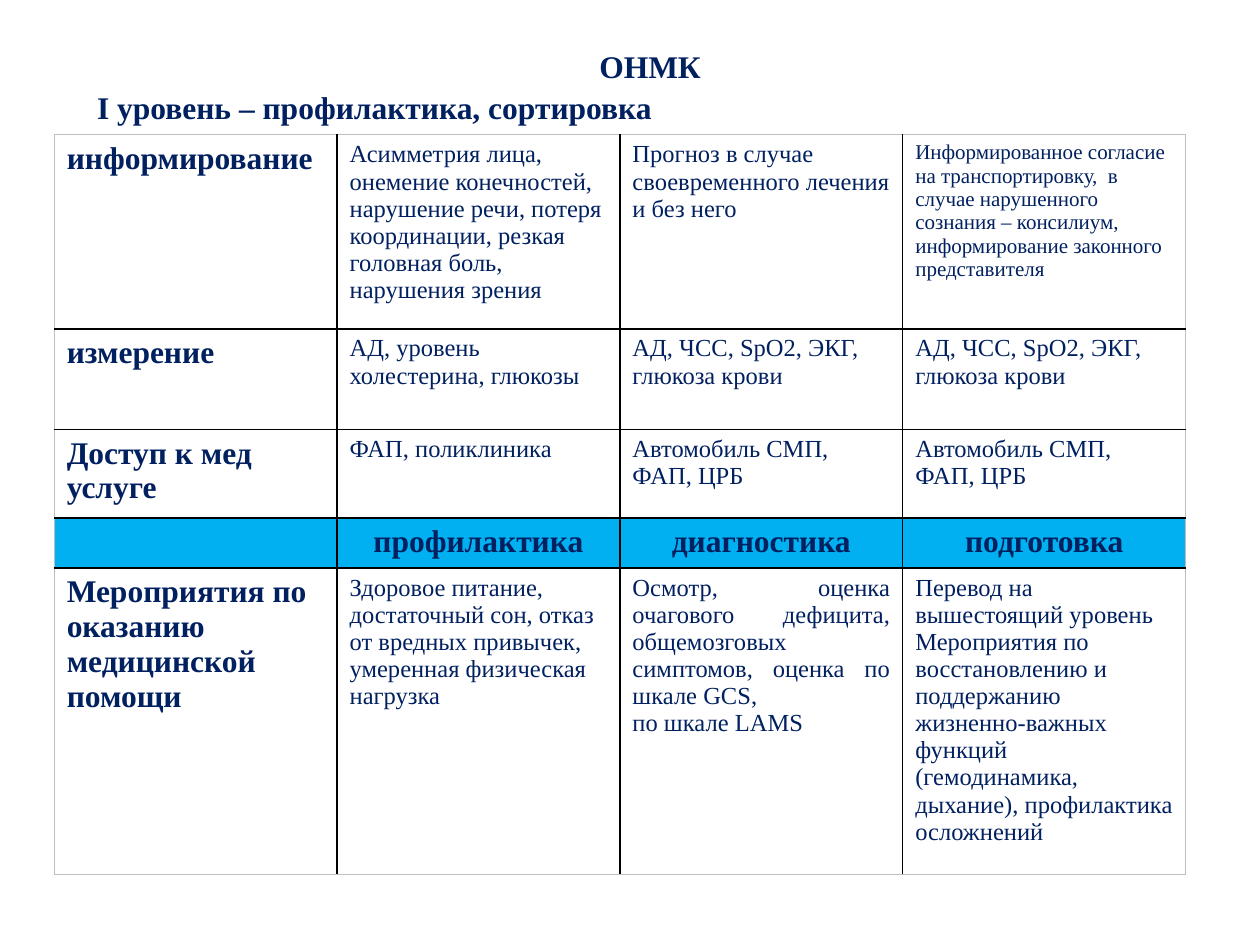
from lxml import etree
from pptx import Presentation
from pptx import util as u
from pptx.dml.color import RGBColor
from pptx.enum import text
from pptx.oxml import ns

COLORS = {"navy": "002060", "band": "00B0F0", "grid": "000000", "edge": "BFBFBF"}
FONT = "Times New Roman"
ALIGN = text.PP_ALIGN


def format_para(para, size, bold, align=ALIGN.LEFT):
    para.alignment = align
    para.font.name = FONT
    para.font.size = u.Pt(size)
    para.font.bold = bold
    para.font.color.rgb = RGBColor.from_string(COLORS["navy"])


def add_border(cell, side, color, width):
    line = etree.SubElement(cell._tc.get_or_add_tcPr(), ns.qn(f"a:{side}"), w=str(u.Pt(width)))
    fill = etree.SubElement(line, ns.qn("a:solidFill"))
    etree.SubElement(fill, ns.qn("a:srgbClr"), val=color)


deck = Presentation()
deck.slide_width, deck.slide_height = u.Inches(10), u.Inches(7.5)
page = deck.slides.add_slide(deck.slide_layouts[5])

# Title: centred heading with the level below it
title = page.shapes.title
title.left, title.top = u.Inches(0.67), u.Inches(0.29)
title.width, title.height = u.Inches(8.98), u.Inches(0.71)
frame = title.text_frame
frame.text = "ОНМК\nI уровень – профилактика, сортировка"
frame.word_wrap = True
frame.auto_size = text.MSO_AUTO_SIZE.NONE
frame.vertical_anchor = text.MSO_ANCHOR.TOP
for para, align in zip(frame.paragraphs, (ALIGN.CENTER, ALIGN.LEFT)):
    format_para(para, 18, True, align)
    para.line_spacing = 1.1

# Table content, a row height with its four cells
ROWS = [
    (1.54, ["информирование",
            "Асимметрия лица, онемение конечностей, нарушение речи, потеря координации, "
            "резкая головная боль, нарушения зрения",
            "Прогноз в случае своевременного лечения и без него",
            "Информированное согласие на транспортировку,  в случае нарушенного сознания – "
            "консилиум, информирование законного представителя"]),
    (0.8, ["измерение", "АД, уровень холестерина, глюкозы",
           "АД, ЧСС, SpO2, ЭКГ, глюкоза крови", "АД, ЧСС, SpO2, ЭКГ, глюкоза крови"]),
    (0.7, ["Доступ к мед услуге", "ФАП, поликлиника",
           "Автомобиль СМП, ФАП, ЦРБ", "Автомобиль СМП, ФАП, ЦРБ"]),
    (0.4, ["", "профилактика", "диагностика", "подготовка"]),
    (2.43, ["Мероприятия по оказанию медицинской помощи",
            "Здоровое питание, достаточный сон, отказ от вредных привычек, "
            "умеренная физическая нагрузка",
            "Осмотр, оценка очагового дефицита, общемозговых симптомов, "
            "оценка по шкале GCS,\nпо шкале LAMS",
            "Перевод на вышестоящий уровень\nМероприятия по восстановлению и поддержанию "
            "жизненно-важных функций (гемодинамика, дыхание), профилактика осложнений"]),
]
BAND_ROW = 3
SMALL_CELL = (0, 3)
JUSTIFIED_CELL = (4, 2)
last_row, last_col = len(ROWS) - 1, 3

table = page.shapes.add_table(len(ROWS), 4, u.Inches(0.43), u.Inches(1.07),
                              u.Inches(8.98), u.Inches(5.87)).table
table.first_row = table.horz_banding = False
for column in table.columns:
    column.width = u.Inches(8.98 / 4)

for r, (height, words) in enumerate(ROWS):
    table.rows[r].height = u.Inches(height)
    for c, wording in enumerate(words):
        cell = table.cell(r, c)
        cell.text = wording
        heading = c == 0 or r == BAND_ROW
        size = 18 if heading else 12 if (r, c) == SMALL_CELL else 14
        align = ALIGN.LEFT
        if r == BAND_ROW:
            align = ALIGN.CENTER
        elif (r, c) == JUSTIFIED_CELL:
            align = ALIGN.JUSTIFY
        for para in cell.text_frame.paragraphs:
            format_para(para, size, heading, align)

        # Black inner grid, thin grey outer edge; borders go before the fill
        outer = {"lnL": c == 0, "lnR": c == last_col, "lnT": r == 0, "lnB": r == last_row}
        for side, at_edge in outer.items():
            add_border(cell, side, COLORS["edge" if at_edge else "grid"], 0.5 if at_edge else 1)
        if r == BAND_ROW:
            cell.fill.solid()
            cell.fill.fore_color.rgb = RGBColor.from_string(COLORS["band"])
        else:
            cell.fill.background()

deck.save("out.pptx")
